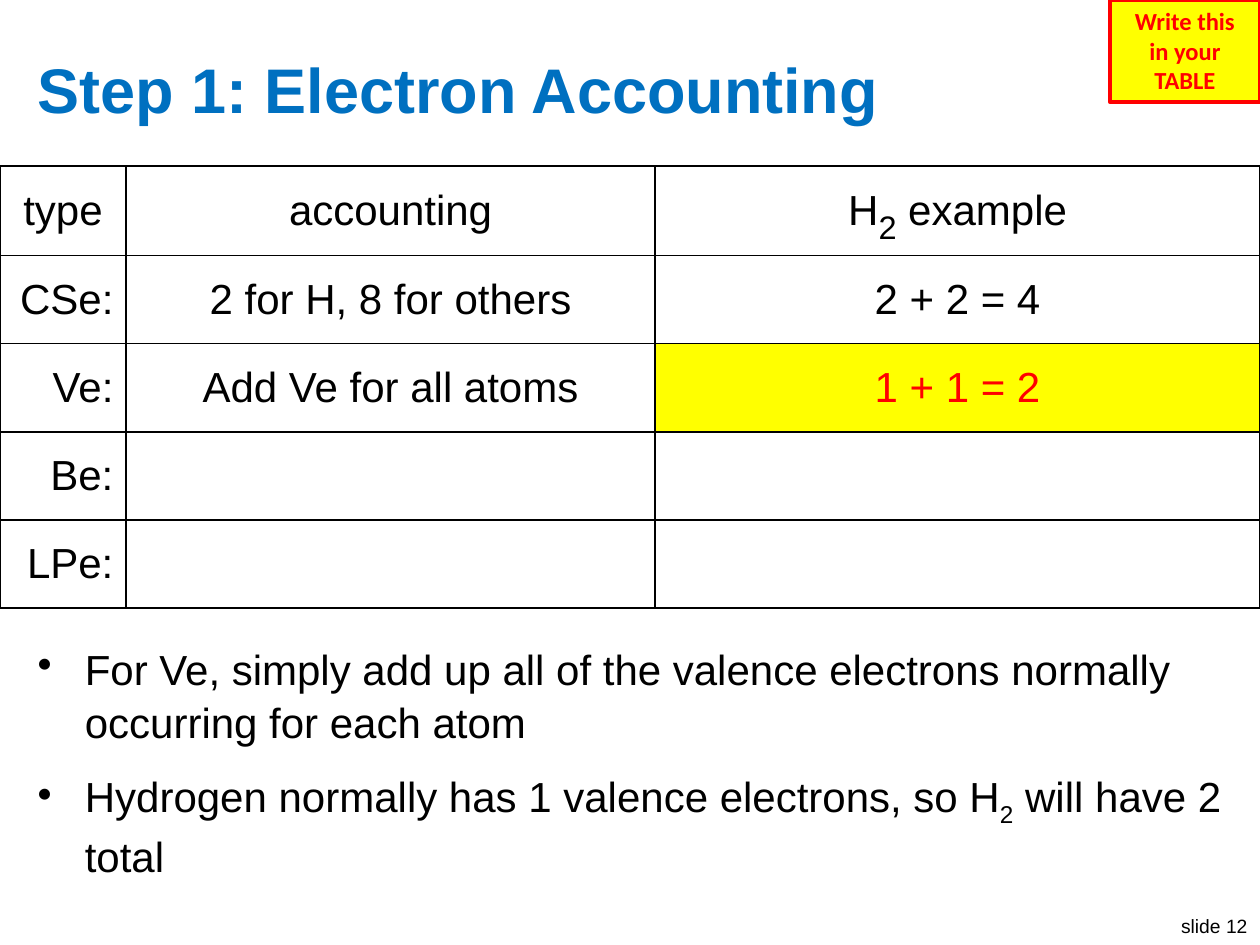
from typing import NamedTuple

from lxml.etree import SubElement
from pptx import Presentation
from pptx.dml.color import RGBColor
from pptx.enum.shapes import MSO_SHAPE
from pptx.enum.text import MSO_ANCHOR, PP_ALIGN
from pptx.oxml.ns import qn
from pptx.util import Pt

COLORS = {"black": "000000", "white": "FFFFFF", "blue": "0070C0",
          "red": "FF0000", "yellow": "FFFF00"}


class Span(NamedTuple):
    text: str
    subscript: bool = False
    size: float | None = None


class Style(NamedTuple):
    size: float
    color: str = "black"
    bold: bool = False
    name: str = "Arial"
    align: PP_ALIGN = PP_ALIGN.LEFT


class Area(NamedTuple):
    left: float
    top: float
    width: float
    height: float

    def lengths(self) -> list[Pt]:
        return [Pt(value) for value in self]


def rgb(name: str) -> RGBColor:
    return RGBColor.from_string(COLORS[name])


def write(para, spans: list[Span], style: Style) -> None:
    para.alignment = style.align
    font = para.font
    font.name, font.size, font.bold = style.name, Pt(style.size), style.bold
    font.color.rgb = rgb(style.color)
    for span in spans:
        run = para.add_run()
        run.text = span.text
        if span.size:
            run.font.size = Pt(span.size)
        if span.subscript:
            run.font._element.set("baseline", "-25000")


def fill_frame(frame, paragraphs: list[list[Span]], style: Style) -> None:
    for index, spans in enumerate(paragraphs):
        para = frame.add_paragraph() if index else frame.paragraphs[0]
        write(para, spans, style)


def add_text(page, area: Area, paragraphs: list[list[Span]], style: Style,
             wrap: bool = True, anchor: MSO_ANCHOR = MSO_ANCHOR.TOP):
    frame = page.shapes.add_textbox(*area.lengths()).text_frame
    frame.word_wrap = wrap
    frame.vertical_anchor = anchor
    fill_frame(frame, paragraphs, style)
    return frame


def add_bullet(para, indent: float) -> None:
    para.space_before = Pt(12)
    para.line_spacing = 1.05
    properties = para._p.get_or_add_pPr()
    properties.set("marL", str(Pt(indent)))
    properties.set("indent", str(-Pt(indent)))
    bullet = properties.makeelement(qn("a:buChar"), {"char": "•"})
    properties.insert_element_before(bullet, "a:tabLst", "a:defRPr", "a:extLst")


def add_borders(cell, color: str, width: float) -> None:
    properties = cell._tc.get_or_add_tcPr()
    for index, side in enumerate(("lnL", "lnR", "lnT", "lnB")):
        line = properties.makeelement(qn(f"a:{side}"), {"w": str(Pt(width))})
        fill = SubElement(line, qn("a:solidFill"))
        SubElement(fill, qn("a:srgbClr"), val=COLORS[color])
        properties.insert(index, line)


def add_accounting_table(page, area: Area, widths: list[float],
                         rows: list[list[list[Span]]], answer: tuple[int, int]) -> None:
    frame = page.shapes.add_table(len(rows), len(widths), *area.lengths())
    table = frame.table
    for column, width in zip(table.columns, widths):
        column.width = Pt(width)
    for r, row in enumerate(rows):
        for c, spans in enumerate(row):
            cell = table.cell(r, c)
            is_answer = (r, c) == answer
            cell.vertical_anchor = MSO_ANCHOR.MIDDLE
            cell.fill.solid()
            cell.fill.fore_color.rgb = rgb("yellow" if is_answer else "white")
            align = PP_ALIGN.RIGHT if r and not c else PP_ALIGN.CENTER
            write(cell.text_frame.paragraphs[0], spans,
                  Style(24, "red" if is_answer else "black", align=align))
            add_borders(cell, "black", 1)


def add_note(page, area: Area, paragraphs: list[list[Span]]) -> None:
    box = page.shapes.add_shape(MSO_SHAPE.RECTANGLE, *area.lengths())
    box.shadow.inherit = False
    box.fill.solid()
    box.fill.fore_color.rgb = rgb("yellow")
    box.line.color.rgb = rgb("red")
    box.line.width = Pt(2.25)
    box.text_frame.word_wrap = True
    box.text_frame.vertical_anchor = MSO_ANCHOR.TOP
    fill_frame(box.text_frame, paragraphs,
               Style(14, "red", True, "Calibri", PP_ALIGN.CENTER))


def main() -> None:
    deck = Presentation()
    deck.slide_width, deck.slide_height = Pt(720), Pt(540)
    page = deck.slides.add_slide(deck.slide_layouts[6])

    # Slide number and title
    add_text(page, Area(666, 519, 54, 21), [[Span("slide 12")]],
             Style(11, align=PP_ALIGN.RIGHT), wrap=False)
    add_text(page, Area(14.4, 21.6, 691.2, 57.6), [[Span("Step 1: Electron Accounting")]],
             Style(36, "blue", True), anchor=MSO_ANCHOR.MIDDLE)

    # Explanation
    body = add_text(page, Area(14.4, 363, 691.2, 160), [
        [Span("For Ve, simply add up all of the valence electrons normally "
              "occurring for each atom")],
        [Span("Hydrogen normally has 1 valence electrons, so H"),
         Span("2", subscript=True), Span(" will have 2 total")],
    ], Style(24))
    for para in body.paragraphs:
        add_bullet(para, 27)

    # Accounting table
    rows = [
        [[Span("type")], [Span("accounting")],
         [Span("H"), Span("2", subscript=True, size=32), Span(" example")]],
        [[Span("CSe:")], [Span("2 for H, 8 for others")], [Span("2 + 2 = 4")]],
        [[Span("Ve:")], [Span("Add Ve for all atoms")], [Span("1 + 1 = 2")]],
        [[Span("Be:")], [], []],
        [[Span("LPe:")], [], []],
    ]
    add_accounting_table(page, Area(0, 95, 720, 252), [72, 302.4, 345.6],
                         rows, answer=(2, 2))

    # Corner note
    add_note(page, Area(634.2, 0, 85.8, 58.3),
             [[Span("Write this")], [Span("in your TABLE")]])

    deck.save("out.pptx")


if __name__ == "__main__":
    main()
